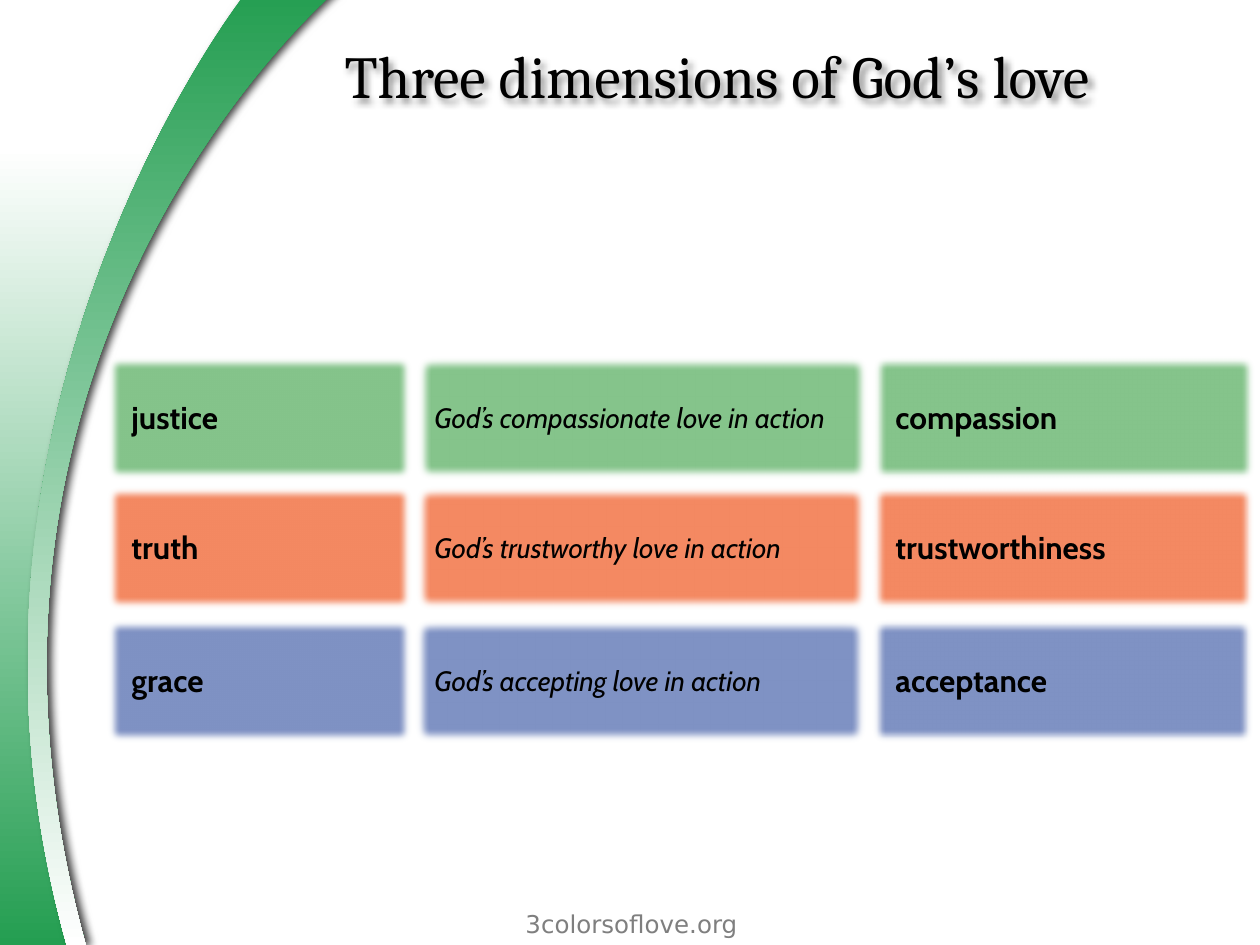
"""Build the slide on the three dimensions of God's love."""
from dataclasses import dataclass

from lxml.etree import SubElement
from pptx import Presentation
from pptx.dml.color import RGBColor
from pptx.enum.shapes import MSO_SHAPE
from pptx.enum.text import MSO_ANCHOR, MSO_AUTO_SIZE, PP_ALIGN
from pptx.oxml.ns import qn
from pptx.util import Emu, Pt

SCALE = 914400 / 126


@dataclass(frozen=True)
class Theme:
    green: str = "249E51"
    white: str = "FFFFFF"
    black: str = "000000"
    grey: str = "7F7F7F"
    title_font: str = "Cambria"
    label_font: str = "Cabin"
    footer_font: str = "DejaVu Sans"
    title_size: int = 34
    label_size: int = 18
    phrase_size: int = 16
    footer_size: int = 14


@dataclass(frozen=True)
class Row:
    top: int
    fill: str
    texts: tuple[str, str, str]


@dataclass(frozen=True)
class Column:
    left: int
    width: int
    drift: int
    text_left: int
    text_width: int
    text_height: int
    style: dict


THEME = Theme()
ROW_HEIGHT = 129
TEXT_CENTRE = 63
LABEL = dict(font=THEME.label_font, size=THEME.label_size, bold=True)
PHRASE = dict(font=THEME.label_font, size=THEME.phrase_size, italic=True)
ROWS = (
    Row(354, "85C48B", ("justice", "God’s compassionate love in action", "compassion")),
    Row(484, "F48962", ("truth", "God’s trustworthy love in action", "trustworthiness")),
    Row(617, "7F92C4", ("grace", "God’s accepting love in action", "acceptance")),
)
COLUMNS = (
    Column(104, 311, 0, 119, 282, 50, LABEL),
    Column(415, 456, -1, 422, 441, 46, PHRASE),
    Column(871, 387, -1, 883, 362, 50, LABEL),
)
SWEEP = (
    (0, 147),
    ((82, 147), (52, 147), (190, 147)),
    ((-44, 544), (63, 868), (82, 945)),
    ((40, 945), (0, 945), (0, 945)),
    ((-14, 811), (0, 147), (0, 147)),
)
BAND = (
    (67, 946),
    ((77, 946), (86, 946), (86, 946)),
    ((-81, 344), (336, -9), (336, -9)),
    ((248, -10),),
    ((248, -10), (-84, 411), (67, 946)),
)


def px(n: int) -> Emu:
    """Turn pixels into EMU."""
    return Emu(round(n * SCALE))


def add_effect(sp, tag: str, **attrs: int):
    """Replace the inherited effects of a shape with a single one."""
    sp.shadow.inherit = False
    effects = sp._element.spPr.find(qn("a:effectLst"))
    return SubElement(effects, qn(tag), {k: str(v) for k, v in attrs.items()})


def add_shadow(sp, *, blur: float, dist: float, angle: int, alpha: int) -> None:
    """Give a shape a soft black outer shadow."""
    shadow = add_effect(sp, "a:outerShdw", blurRad=Pt(blur), dist=Pt(dist),
                        dir=angle * 60000, algn="tl", rotWithShape=0)
    color = SubElement(shadow, qn("a:srgbClr"), val=THEME.black)
    SubElement(color, qn("a:alpha"), val=str(alpha * 1000))


def bend(sp, segments: tuple) -> None:
    """Turn each run of three lines into the cubic curve they control."""
    outline = next(sp._element.iter(qn("a:path")))
    lines = iter(outline.findall(qn("a:lnTo")))
    for segment in segments:
        group = [next(lines) for _ in segment]
        if len(group) == 3:
            curve = SubElement(outline, qn("a:cubicBezTo"))
            group[0].addprevious(curve)
            for line in group:
                curve.append(line[0])
                outline.remove(line)


def add_curve(s, points: tuple, top: str, bottom: str):
    """Draw a closed outline with a vertical gradient."""
    (x, y), *segments = points
    builder = s.shapes.build_freeform(px(x), px(y), scale=1.0)
    builder.add_line_segments([(px(a), px(b)) for seg in segments for a, b in seg], close=True)
    sp = builder.convert_to_shape()
    bend(sp, segments)
    sp.fill.gradient()
    sp.fill.gradient_angle = 270
    for stop, color in zip(sp.fill.gradient_stops, (top, bottom)):
        stop.color.rgb = RGBColor.from_string(color)
    sp.line.fill.background()
    sp.shadow.inherit = False
    return sp


def add_panel(group, left: int, top: int, width: int, color: str) -> None:
    """Draw a soft-edged colour panel."""
    sp = group.shapes.add_shape(MSO_SHAPE.RECTANGLE, px(left), px(top), px(width), px(ROW_HEIGHT))
    sp.fill.solid()
    sp.fill.fore_color.rgb = RGBColor.from_string(color)
    sp.line.fill.background()
    add_effect(sp, "a:softEdge", rad=Pt(5))


def write(sp, text: str, *, font: str, size: int, color: str = THEME.black,
          bold: bool = False, italic: bool = False, align=PP_ALIGN.LEFT,
          anchor=MSO_ANCHOR.MIDDLE, fit=MSO_AUTO_SIZE.NONE) -> None:
    """Put one formatted paragraph into a shape."""
    tf = sp.text_frame
    tf.word_wrap = True
    tf.auto_size = fit
    tf.vertical_anchor = anchor
    p = tf.paragraphs[0]
    p.alignment = align
    r = p.add_run()
    r.text = text
    r.font.name = font
    r.font.size = Pt(size)
    r.font.bold = bold
    r.font.italic = italic
    r.font.color.rgb = RGBColor.from_string(color)


def add_text(s, box: tuple[int, int, int, int], text: str, **style) -> None:
    """Add a text box with one formatted paragraph."""
    write(s.shapes.add_textbox(*map(px, box)), text, **style)


def add_title(s, text: str) -> None:
    """Place and format the title placeholder."""
    sp = s.shapes.title
    sp.left, sp.top, sp.width, sp.height = map(px, (332, 0, 928, 150))
    write(sp, text, font=THEME.title_font, size=THEME.title_size)
    add_shadow(sp, blur=4, dist=3, angle=45, alpha=45)


def add_grid(s) -> None:
    """Draw the grouped panels and the texts over them."""
    group = s.shapes.add_group_shape()
    for col in COLUMNS:
        for i, row in enumerate(ROWS):
            add_panel(group, col.left + i * col.drift, row.top, col.width, row.fill)
    for k, col in enumerate(COLUMNS):
        for row in ROWS:
            top = row.top + TEXT_CENTRE - col.text_height // 2
            add_text(s, (col.text_left, top, col.text_width, col.text_height), row.texts[k],
                     fit=MSO_AUTO_SIZE.SHAPE_TO_FIT_TEXT, **col.style)


def main() -> None:
    """Build and save the presentation."""
    prs = Presentation()
    prs.slide_width, prs.slide_height = px(1260), px(945)
    s = prs.slides.add_slide(prs.slide_layouts[0])
    subtitle = s.placeholders[1]._element
    subtitle.getparent().remove(subtitle)
    add_curve(s, SWEEP, THEME.white, THEME.green)
    band = add_curve(s, BAND, THEME.green, THEME.white)
    add_shadow(band, blur=5, dist=3, angle=0, alpha=75)
    add_title(s, "Three dimensions of God’s love")
    add_text(s, (432, 903, 399, 42), "3colorsoflove.org", font=THEME.footer_font,
             size=THEME.footer_size, color=THEME.grey, align=PP_ALIGN.CENTER,
             anchor=MSO_ANCHOR.TOP)
    add_grid(s)
    prs.save("out.pptx")


if __name__ == "__main__":
    main()
